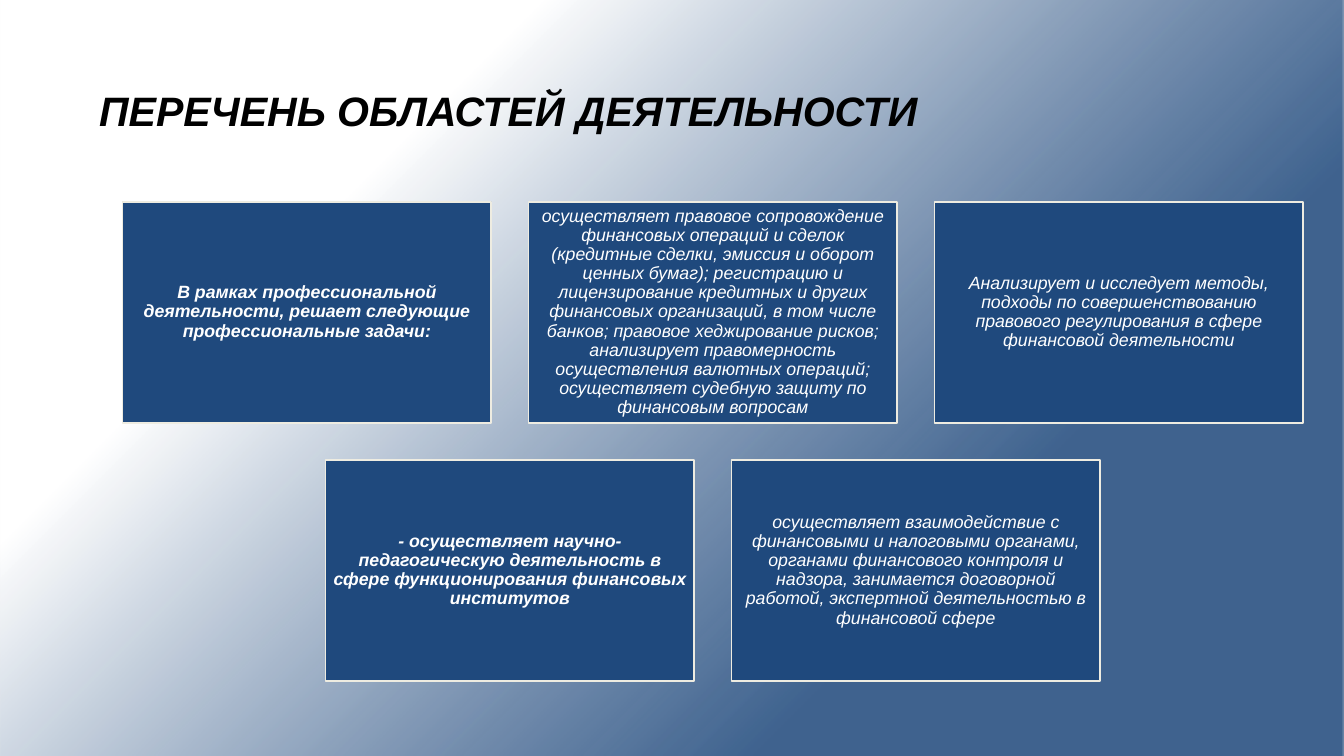
from dataclasses import dataclass

from lxml import etree
from pptx import Presentation
from pptx.dml.color import RGBColor
from pptx.enum.shapes import MSO_SHAPE
from pptx.enum.text import MSO_ANCHOR, MSO_AUTO_SIZE, PP_ALIGN
from pptx.oxml.ns import qn
from pptx.util import Pt

RECT = MSO_SHAPE.RECTANGLE
MIDDLE = MSO_ANCHOR.MIDDLE
NO_AUTOFIT = MSO_AUTO_SIZE.NONE
LEFT, CENTER = PP_ALIGN.LEFT, PP_ALIGN.CENTER

EMU_PER_PX = 9525
SLIDE_W, SLIDE_H = 1920, 1080
CARD_W, CARD_H, GAP = 527, 316, 53
GRID_LEFT, GRID_TOP, COLUMNS = 175, 288, 3
CARD_INSET = 8


@dataclass(frozen=True)
class Theme:
    """Colours, font and type sizes of the slide."""
    page: str = "F2F2F2"
    navy: str = "1F497D"
    white: str = "FFFFFF"
    border: str = "EEECE1"
    title: str = "000000"
    font: str = "Arial"
    title_size: int = 44
    card_size: int = 19
    navy_alpha: int = 84


THEME = Theme()

TITLE = "ПЕРЕЧЕНЬ ОБЛАСТЕЙ ДЕЯТЕЛЬНОСТИ"

CARD_ROWS = [
    [
        ("В рамках профессиональной деятельности, решает следующие "
         "профессиональные задачи:", True),
        ("осуществляет правовое сопровождение финансовых операций и сделок "
         "(кредитные сделки, эмиссия и оборот ценных бумаг); регистрацию и "
         "лицензирование кредитных и других финансовых организаций, в том "
         "числе банков; правовое хеджирование рисков; анализирует "
         "правомерность осуществления валютных операций; осуществляет "
         "судебную защиту по финансовым вопросам", False),
        ("Анализирует и исследует методы, подходы по совершенствованию "
         "правового регулирования в сфере финансовой деятельности", False),
    ],
    [
        ("- осуществляет научно-педагогическую деятельность в сфере "
         "функционирования финансовых институтов", True),
        ("осуществляет взаимодействие с финансовыми и налоговыми органами, "
         "органами финансового контроля и надзора, занимается договорной "
         "работой, экспертной деятельностью в финансовой сфере", False),
    ],
]


def px(value):
    """Turn whole pixels into EMU."""
    return value * EMU_PER_PX


def rgb(value):
    """Turn a hex string into a colour."""
    return RGBColor.from_string(value)


def write(tf, text, size, color, align, bold):
    """Write one italic paragraph, centred vertically in its frame."""
    tf.word_wrap = True
    tf.auto_size = NO_AUTOFIT
    tf.vertical_anchor = MIDDLE
    p = tf.paragraphs[0]
    p.alignment = align
    p.line_spacing = 0.9
    p.space_before = Pt(0)
    r = p.add_run()
    r.text = text
    r.font.name = THEME.font
    r.font.size = Pt(size)
    r.font.bold = bold
    r.font.italic = True
    r.font.color.rgb = rgb(color)


def add_rect(s, left, top, width, height):
    """Add a rectangle without a shadow."""
    sp = s.shapes.add_shape(RECT, px(left), px(top), px(width), px(height))
    sp.shadow.inherit = False
    return sp


def add_backdrop(s):
    """Lay a diagonal gradient from white to translucent navy behind all."""
    s.background.fill.solid()
    s.background.fill.fore_color.rgb = rgb(THEME.page)
    sp = add_rect(s, 0, 0, SLIDE_W, SLIDE_H)
    sp.line.fill.background()
    sp.fill.gradient()
    sp.fill.gradient_angle = 315
    stops = zip(sp.fill.gradient_stops, (0.26, 0.72), (THEME.white, THEME.navy))
    for stop, position, color in stops:
        stop.position = position
        stop.color.rgb = rgb(color)
    navy = sp.element.findall(".//" + qn("a:srgbClr"))[-1]
    etree.SubElement(navy, qn("a:alpha"), val=str(THEME.navy_alpha * 1000))
    s.shapes.title.element.addprevious(sp.element)


def add_title(s):
    """Place and fill the title placeholder."""
    sp = s.shapes.title
    sp.left, sp.top, sp.width, sp.height = map(px, (132, 58, 1656, 208))
    write(sp.text_frame, TITLE, THEME.title_size, THEME.title, LEFT, True)


def add_card(s, left, top, text, bold):
    """Add a bordered navy card with centred text."""
    sp = add_rect(s, left, top, CARD_W, CARD_H)
    sp.fill.solid()
    sp.fill.fore_color.rgb = rgb(THEME.navy)
    sp.line.color.rgb = rgb(THEME.border)
    sp.line.width = Pt(2)
    tf = sp.text_frame
    tf.margin_left = tf.margin_right = px(CARD_INSET)
    tf.margin_top = tf.margin_bottom = px(CARD_INSET)
    write(tf, text, THEME.card_size, THEME.white, CENTER, bold)


def add_cards(s):
    """Lay out the card rows, each centred on the full grid width."""
    step = CARD_W + GAP
    for row, cards in enumerate(CARD_ROWS):
        left = GRID_LEFT + (COLUMNS - len(cards)) * step // 2
        top = GRID_TOP + row * (CARD_H + GAP)
        for column, (text, bold) in enumerate(cards):
            add_card(s, left + column * step, top, text, bold)


def main():
    """Build and save the slide."""
    prs = Presentation()
    prs.slide_width, prs.slide_height = px(SLIDE_W), px(SLIDE_H)
    s = prs.slides.add_slide(prs.slide_layouts.get_by_name("Title Only"))
    add_backdrop(s)
    add_title(s)
    add_cards(s)
    prs.save("out.pptx")


if __name__ == "__main__":
    main()
